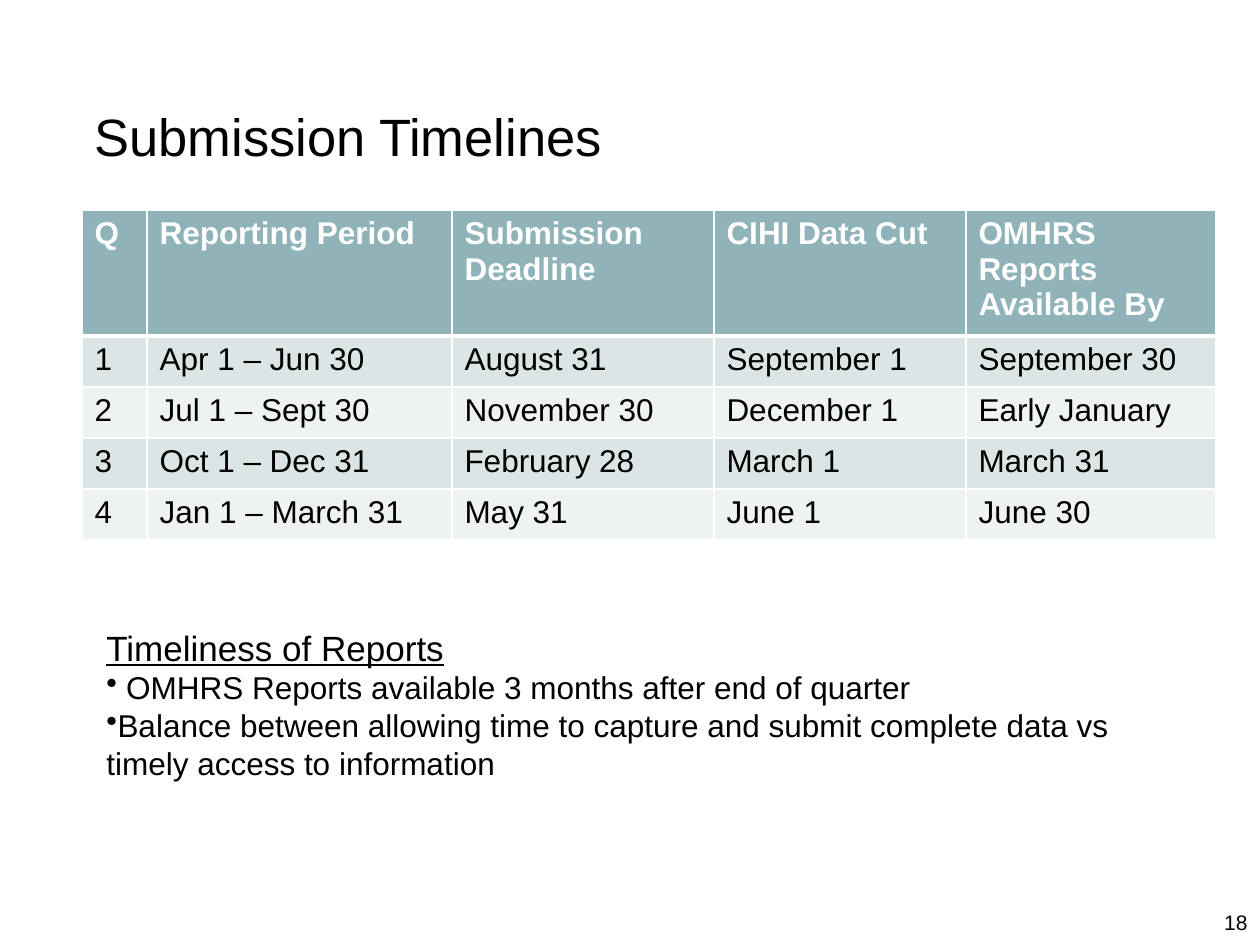
from lxml.etree import SubElement
from pptx import Presentation
from pptx.dml.color import RGBColor
from pptx.enum.text import MSO_ANCHOR as Anchor, PP_ALIGN as Align
from pptx.oxml.ns import qn
from pptx.util import Emu, Pt

TITLE = "Submission Timelines"
HEADER = ["Q", "Reporting Period", "Submission Deadline", "CIHI Data Cut",
          "OMHRS Reports Available By"]
QUARTERS = [
    ["1", "Apr 1 – Jun 30", "August 31", "September 1", "September 30"],
    ["2", "Jul 1 – Sept 30", "November 30", "December 1", "Early January"],
    ["3", "Oct 1 – Dec 31", "February 28", "March 1", "March 31"],
    ["4", "Jan 1 – March 31", "May 31", "June 1", "June 30"],
]
NOTES_HEADING = "Timeliness of Reports"
NOTES = [
    " OMHRS Reports available 3 months after end of quarter",
    "Balance between allowing time to capture and submit complete data vs "
    "timely access to information",
]
PAGE_NUMBER = "18"

COLUMN_WIDTHS = [65, 305, 262, 252, 250]
HEADER_HEIGHT, ROW_HEIGHT = 118, 51

FONT = "Arial"
BLACK = RGBColor(0, 0, 0)
WHITE = RGBColor(255, 255, 255)
TEAL = RGBColor(0x8F, 0xB3, 0xB9)
BANDS = [RGBColor(0xDB, 0xE5, 0xE6), RGBColor(0xEE, 0xF2, 0xF3)]


def px(length):
    return Emu(round(length * 914400 / 126))


def add_run(paragraph, text, size, color=BLACK, bold=False, underline=False):
    run = paragraph.add_run()
    run.text = text
    font = run.font
    font.name, font.size, font.bold = FONT, Pt(size), bold
    font.underline = underline
    font.color.rgb = color


def add_text_frame(slide, left, top, width, height, anchor=Anchor.TOP):
    box = slide.shapes.add_textbox(px(left), px(top), px(width), px(height))
    frame = box.text_frame
    frame.word_wrap = True
    frame.vertical_anchor = anchor
    return frame


def set_borders(cell, top, bottom):
    """Draw white cell borders; top and bottom are widths in points."""
    properties = cell._tc.get_or_add_tcPr()
    for index, (side, width) in enumerate(
            [("lnL", 1), ("lnR", 1), ("lnT", top), ("lnB", bottom)]):
        line = SubElement(properties, qn(f"a:{side}"), w=str(Pt(width)))
        fill = SubElement(line, qn("a:solidFill"))
        SubElement(fill, qn("a:srgbClr"), val=str(WHITE))
        properties.insert(index, line)


def add_timeline_table(slide, left, top):
    rows = [HEADER] + QUARTERS
    heights = [HEADER_HEIGHT] + [ROW_HEIGHT] * len(QUARTERS)
    table = slide.shapes.add_table(
        len(rows), len(HEADER), px(left), px(top),
        px(sum(COLUMN_WIDTHS)), px(sum(heights))).table
    for column, width in zip(table.columns, COLUMN_WIDTHS):
        column.width = px(width)
    for row_index, (texts, height) in enumerate(zip(rows, heights)):
        is_header = row_index == 0
        table.rows[row_index].height = px(height)
        for column_index, text in enumerate(texts):
            cell = table.cell(row_index, column_index)
            cell.fill.solid()
            cell.fill.fore_color.rgb = TEAL if is_header else BANDS[(row_index - 1) % 2]
            set_borders(cell, top=3 if row_index == 1 else 1,
                        bottom=3 if is_header else 1)
            add_run(cell.text_frame.paragraphs[0], text, 18,
                    WHITE if is_header else BLACK, bold=is_header)


def add_notes_block(slide, left, top, width, height):
    frame = add_text_frame(slide, left, top, width, height)
    add_run(frame.paragraphs[0], NOTES_HEADING, 20, underline=True)
    for note in NOTES:
        paragraph = frame.add_paragraph()
        SubElement(paragraph._p.get_or_add_pPr(), qn("a:buChar"), char="•")
        add_run(paragraph, note, 18)


def main():
    presentation = Presentation()
    presentation.slide_width, presentation.slide_height = px(1260), px(945)
    slide = presentation.slides.add_slide(presentation.slide_layouts[6])

    title = add_text_frame(slide, 82, 73, 1052, 126, Anchor.MIDDLE)
    add_run(title.paragraphs[0], TITLE, 30)

    add_timeline_table(slide, 82, 210)

    number = add_text_frame(slide, 1124, 903, 136, 42).paragraphs[0]
    number.alignment = Align.RIGHT
    add_run(number, PAGE_NUMBER, 12)

    add_notes_block(slide, 94, 620, 1081, 170)
    presentation.save("out.pptx")


if __name__ == "__main__":
    main()
